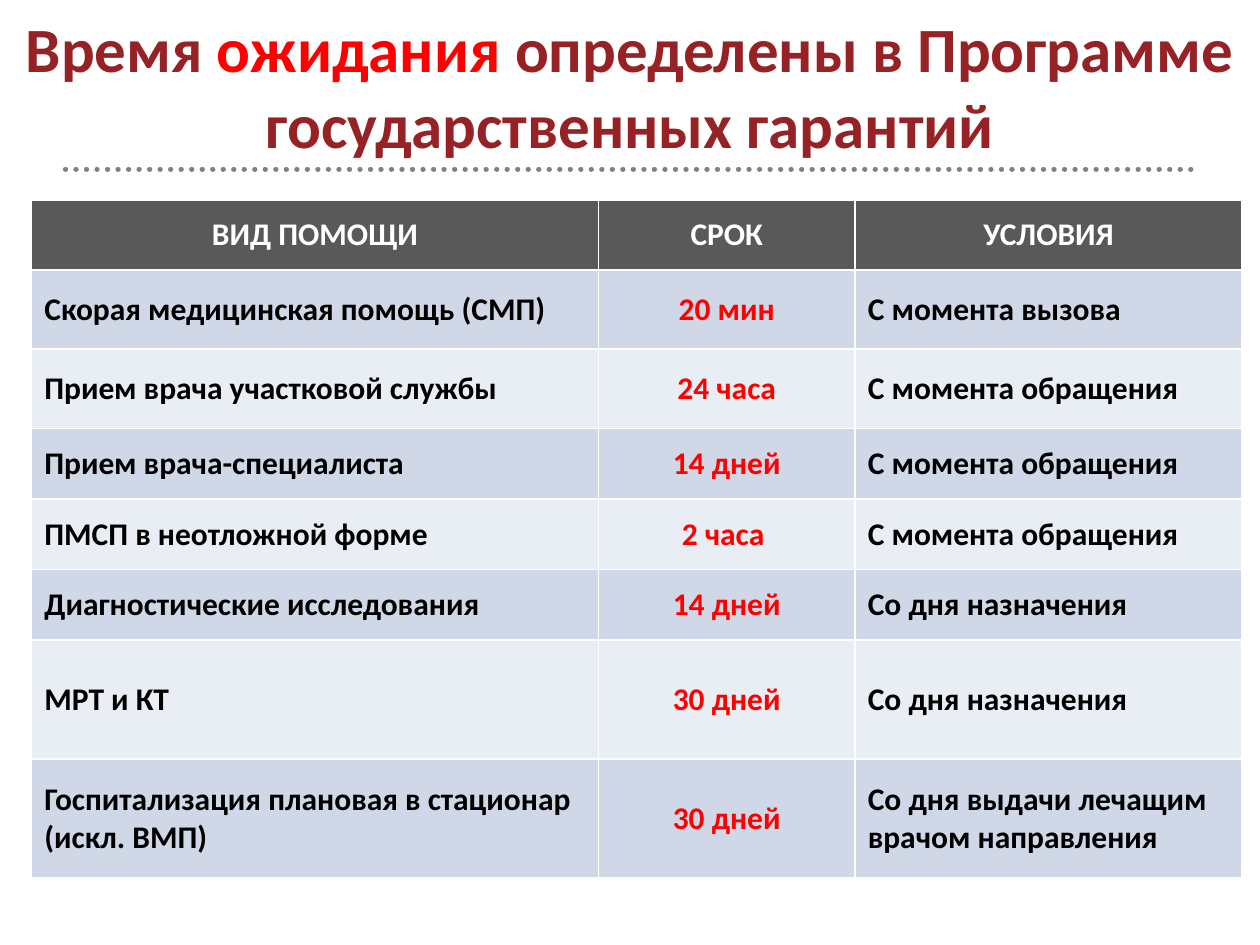
from typing import NamedTuple

from lxml import etree
from pptx import Presentation
from pptx import util as u
from pptx.dml.color import RGBColor
from pptx.enum import dml, shapes, text
from pptx.oxml.ns import qn

COLORS = {
    "title": "962225",
    "accent": "FF0000",
    "divider": "808080",
    "header": "595959",
    "header_text": "FFFFFF",
    "body_text": "000000",
    "odd_row": "D0D8E8",
    "even_row": "E9EDF4",
}
FONT = "Calibri"
LEFT, CENTER = text.PP_ALIGN.LEFT, text.PP_ALIGN.CENTER


class CareRow(NamedTuple):
    care: str
    term: str
    condition: str
    height: float


TITLE_RUNS = [
    ("Время ", "title"),
    ("ожидания", "accent"),
    (" определены в Программе государственных гарантий", "title"),
]
COLUMN_WIDTHS = (11.42, 5.18, 7.8)
HEADER = CareRow("ВИД ПОМОЩИ", "СРОК", "УСЛОВИЯ", 1.4)
CARE_ROWS = [
    CareRow("Скорая медицинская помощь (СМП)", "20 мин", "С момента вызова", 1.6),
    CareRow("Прием врача участковой службы", "24 часа", "С момента обращения", 1.6),
    CareRow("Прием врача-специалиста", "14 дней", "С момента обращения", 1.42),
    CareRow("ПМСП в неотложной форме", "2 часа ", "С момента обращения", 1.42),
    CareRow("Диагностические исследования", "14 дней", "Со дня назначения", 1.42),
    CareRow("МРТ и КТ", "30 дней", "Со дня назначения", 2.4),
    CareRow("Госпитализация плановая в стационар (искл. ВМП)", "30 дней",
            "Со дня выдачи лечащим врачом направления", 2.4),
]


def rgb(name: str) -> RGBColor:
    return RGBColor.from_string(COLORS[name])


def write(paragraph, words: str, *, color: str, size: int, align=LEFT) -> None:
    paragraph.alignment = align
    run = paragraph.add_run()
    run.text = words
    run.font.name = FONT
    run.font.size = u.Pt(size)
    run.font.bold = True
    run.font.color.rgb = rgb(color)


def draw_divider(slide) -> None:
    y = u.Cm(3.41)
    divider = slide.shapes.add_connector(
        shapes.MSO_CONNECTOR.STRAIGHT, u.Cm(1.32), y, u.Cm(24.13), y)
    divider.line.color.rgb = rgb("divider")
    divider.line.width = u.Pt(3)
    divider.line.dash_style = dml.MSO_LINE.ROUND_DOT
    divider.get_or_add_ln().set("cap", "rnd")
    etree.SubElement(divider._element.spPr, qn("a:effectLst"))


def draw_title(slide) -> None:
    title = slide.shapes.add_textbox(0, u.Cm(0.13), u.Cm(25.4), u.Cm(3.18))
    frame = title.text_frame
    frame.word_wrap = True
    frame.vertical_anchor = text.MSO_ANCHOR.MIDDLE
    for words, color in TITLE_RUNS:
        write(frame.paragraphs[0], words, color=color, size=36, align=CENTER)


def fill_row(table, index: int, row: CareRow) -> None:
    is_header = index == 0
    band = "header" if is_header else "odd_row" if index % 2 else "even_row"
    table.rows[index].height = u.Cm(row.height)
    for column, words in enumerate((row.care, row.term, row.condition)):
        is_term = column == 1
        cell = table.cell(index, column)
        cell.fill.solid()
        cell.fill.fore_color.rgb = rgb(band)
        cell.vertical_anchor = text.MSO_ANCHOR.MIDDLE
        color = "header_text" if is_header else "accent" if is_term else "body_text"
        write(cell.text_frame.paragraphs[0], words, color=color, size=18,
              align=CENTER if is_header or is_term else LEFT)


def draw_terms(slide) -> None:
    """Table of waiting times; its default style supplies the white borders."""
    rows = [HEADER, *CARE_ROWS]
    table = slide.shapes.add_table(
        len(rows), len(COLUMN_WIDTHS), u.Cm(0.64), u.Cm(4.04),
        u.Cm(sum(COLUMN_WIDTHS)), u.Cm(sum(row.height for row in rows))).table
    for column, width in zip(table.columns, COLUMN_WIDTHS):
        column.width = u.Cm(width)
    for index, row in enumerate(rows):
        fill_row(table, index, row)


def main() -> None:
    deck = Presentation()
    deck.slide_width, deck.slide_height = u.Cm(25.4), u.Cm(19.05)
    slide = deck.slides.add_slide(deck.slide_layouts[6])
    draw_divider(slide)
    draw_title(slide)
    draw_terms(slide)
    deck.save("out.pptx")


if __name__ == "__main__":
    main()
